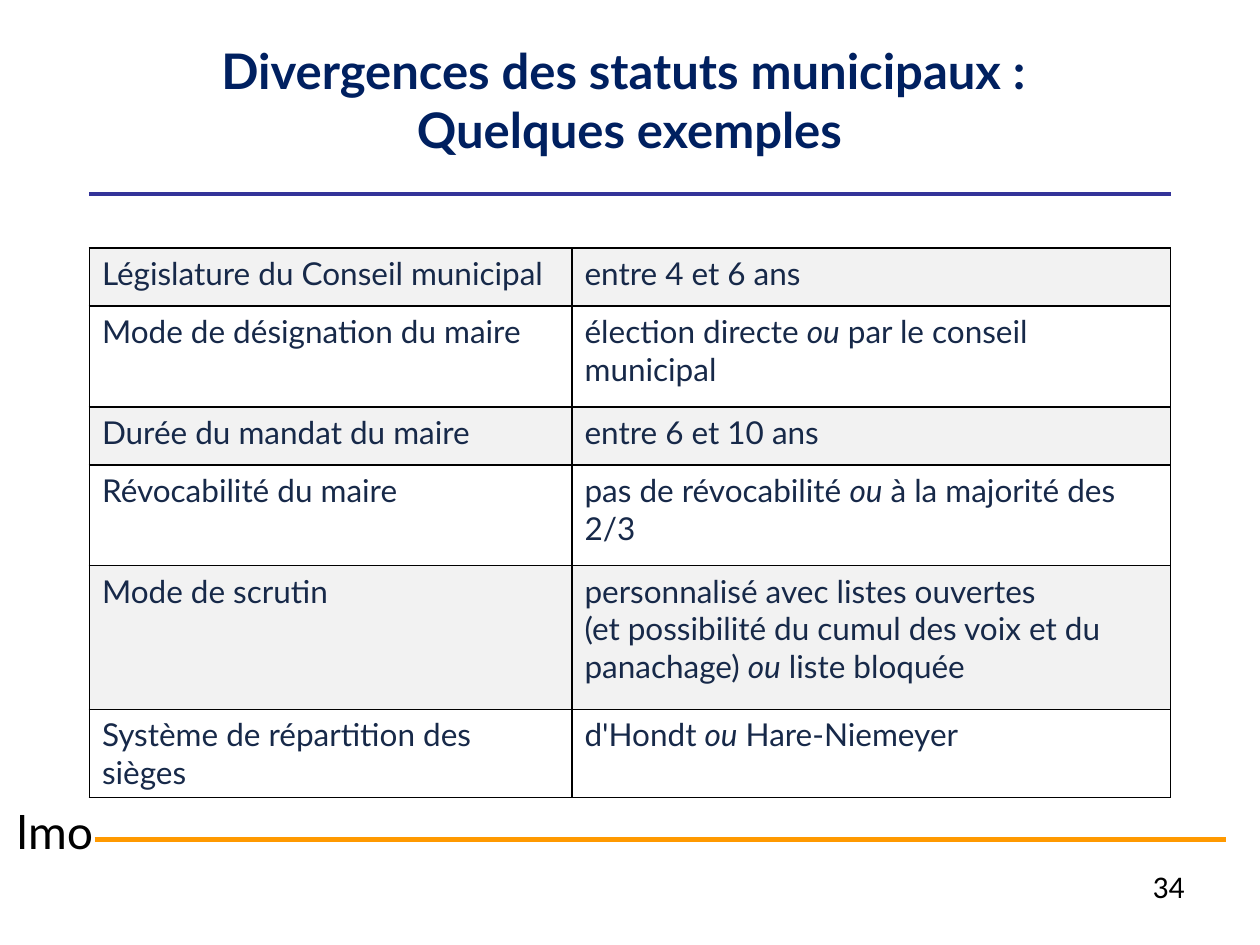
from dataclasses import dataclass

from lxml.etree import SubElement
from pptx import Presentation
from pptx.dml.color import RGBColor as Rgb
from pptx.enum.shapes import MSO_CONNECTOR as Connector
from pptx.enum.text import MSO_ANCHOR as Anchor, PP_ALIGN as Align
from pptx.oxml.ns import qn
from pptx.util import Inches, Pt


@dataclass(frozen=True)
class Theme:
    """Colours, fonts and type sizes of the deck."""
    navy: str = "002060"
    ink: str = "172949"
    black: str = "000000"
    indigo: str = "333399"
    orange: str = "FF9900"
    band: str = "F2F2F2"
    white: str = "FFFFFF"
    main_font: str = "Lato"
    footer_font: str = "Calibri"
    large: int = 28
    body: int = 18


THEME = Theme()
TITLE = "Divergences des statuts municipaux : \vQuelques exemples"
ROWS = [
    (0.46, "Législature du Conseil municipal", "entre 4 et 6 ans"),
    (0.8, "Mode de désignation du maire", "élection directe *ou* par le conseil municipal"),
    (0.46, "Durée du mandat du maire", "entre 6 et 10 ans"),
    (0.8, "Révocabilité du maire", "pas de révocabilité *ou* à la majorité des 2/3"),
    (1.14, "Mode de scrutin",
     "personnalisé avec listes ouvertes\n"
     "(et possibilité du cumul des voix et du panachage) *ou* liste bloquée"),
    (0.46, "Système de répartition des sièges", "d'Hondt *ou* Hare-Niemeyer"),
]


def style_font(para, name, size, color, bold=False):
    """Set the font of a whole paragraph."""
    font = para.font
    font.name, font.size, font.bold = name, Pt(size), bold
    font.color.rgb = Rgb.from_string(color)


def add_text(page, box, text, align, anchor, name, size, color, bold=False):
    """Place one paragraph of text in a box."""
    frame = page.shapes.add_textbox(*map(Inches, box)).text_frame
    frame.word_wrap = True
    frame.vertical_anchor = anchor
    para = frame.paragraphs[0]
    para.text, para.alignment = text, align
    style_font(para, name, size, color, bold)


def add_rule(page, left, top, width, color, weight):
    """Draw a horizontal rule without a shadow."""
    rule = page.shapes.add_connector(
        Connector.STRAIGHT, Inches(left), Inches(top), Inches(left + width), Inches(top))
    rule.line.color.rgb = Rgb.from_string(color)
    rule.line.width = Pt(weight)
    SubElement(rule._element.spPr, qn("a:effectLst"))


def add_borders(cell):
    """Give a cell a thin black line on each side, ahead of its fill."""
    props = cell._tc.get_or_add_tcPr()
    for side in ("lnL", "lnR", "lnT", "lnB"):
        line = SubElement(props, qn(f"a:{side}"), w=str(Pt(1)))
        fill = SubElement(line, qn("a:solidFill"))
        SubElement(fill, qn("a:srgbClr"), val=THEME.black)


def fill_cell(cell, text, color):
    """Write a cell, with text between asterisks in italics."""
    add_borders(cell)
    cell.fill.solid()
    cell.fill.fore_color.rgb = Rgb.from_string(color)
    frame = cell.text_frame
    for index, line in enumerate(text.split("\n")):
        para = frame.add_paragraph() if index else frame.paragraphs[0]
        style_font(para, THEME.main_font, THEME.body, THEME.ink)
        for part, piece in enumerate(line.split("*")):
            span = para.add_run()
            span.text = piece
            if part % 2:
                span.font.italic = True


def add_header(page, left, top, width, height):
    """Place the title above its rule."""
    add_text(page, (left, top, width, height), TITLE, Align.CENTER, Anchor.MIDDLE,
             THEME.main_font, THEME.large, THEME.navy, bold=True)
    add_rule(page, 0.71, top + 1.06, 8.58, THEME.indigo, 2.25)


def add_comparison(page, left, top, widths):
    """Place the two-column table with alternating row fills."""
    heights = [row[0] for row in ROWS]
    shape = page.shapes.add_table(
        len(ROWS), len(widths), Inches(left), Inches(top),
        Inches(sum(widths)), Inches(sum(heights)))
    table = shape.table
    table.first_row = table.horz_banding = False
    for column, width in zip(table.columns, widths):
        column.width = Inches(width)
    for index, (height, *texts) in enumerate(ROWS):
        table.rows[index].height = Inches(height)
        color = THEME.white if index % 2 else THEME.band
        for cell, text in zip(table.rows[index].cells, texts):
            fill_cell(cell, text, color)


def add_footer(page, left, top, width):
    """Place the short name, the rule and the page number."""
    add_rule(page, left, top, width, THEME.orange, 3)
    add_text(page, (left - 1.18, top - 0.51, 1.73, 0.87), "lmo", Align.CENTER,
             Anchor.MIDDLE, THEME.footer_font, THEME.large, THEME.black)
    add_text(page, (left + 7.32, top + 0.17, 1.43, 0.52), "34", Align.RIGHT,
             Anchor.TOP, THEME.footer_font, THEME.body, THEME.black)


def main():
    """Build and save the slide."""
    deck = Presentation()
    deck.slide_width, deck.slide_height = Inches(10), Inches(7.5)
    page = deck.slides.add_slide(deck.slide_layouts[6])
    add_footer(page, 0.75, 6.66, 8.98)
    add_header(page, 0.31, 0.48, 9.37, 0.62)
    add_comparison(page, 0.71, 1.97, (3.83, 4.75))
    deck.save("out.pptx")


if __name__ == "__main__":
    main()
